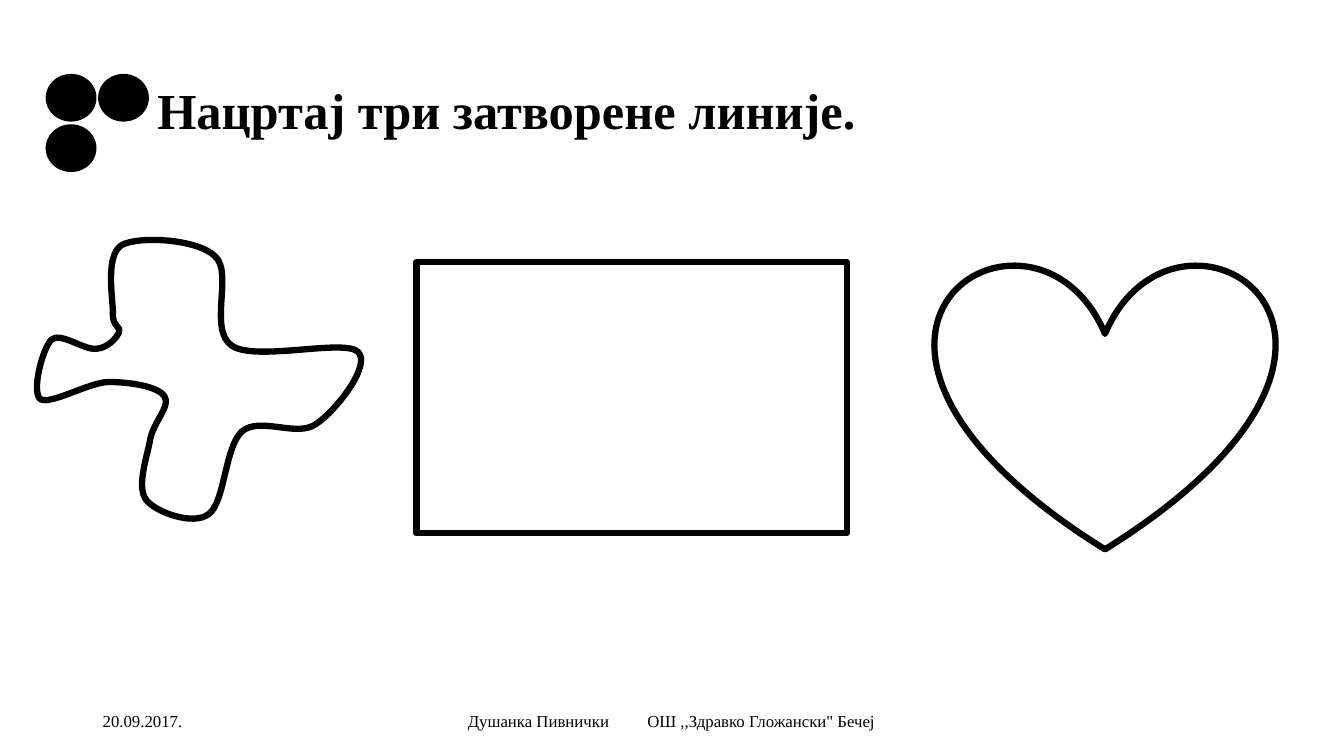
from dataclasses import dataclass

from lxml.etree import SubElement
from pptx import Presentation
from pptx.dml.color import RGBColor
from pptx.enum.shapes import MSO_SHAPE
from pptx.enum.text import MSO_ANCHOR, MSO_AUTO_SIZE, PP_ALIGN
from pptx.oxml.ns import qn
from pptx.util import Inches, Pt

COLORS = {"ink": "000000", "paper": "FFFFFF"}
FONT = "Times New Roman"


@dataclass
class Outline:
    kind: MSO_SHAPE
    left: float
    top: float
    width: float
    height: float
    fill: str = "paper"
    line_width: float = 4.5


@dataclass
class FooterText:
    text: str
    left: float
    width: float
    inset: float = 0.1
    tab: float = 0


DOT_LEFT, DOT_TOP, DOT_STEP_X, DOT_STEP_Y = 0.46, 0.74, 0.52, 0.5
DOTS = [
    Outline(MSO_SHAPE.OVAL, DOT_LEFT + column * DOT_STEP_X, DOT_TOP + row * DOT_STEP_Y,
            0.49, 0.46, "ink", 1)
    for column, row in ((0, 0), (1, 0), (0, 1))
]
CLOSED_LINES = [
    Outline(MSO_SHAPE.RECTANGLE, 4.13, 2.6, 4.27, 2.69),
    Outline(MSO_SHAPE.HEART, 9.28, 2.6, 3.36, 2.85),
]
FOOTERS = [
    FooterText("20.09.2017.", 0.92, 3),
    FooterText('Душанка Пивнички\tОШ ,,Здравко Гложански" Бечеј', 4.42, 4.5, 0.22, 1.78),
]

# Each curve: two control points and an end point, in inches.
CURVE_START = (1.12, 3.1)
CURVES = [
    ((1.12, 2.96), (1.04, 2.53), (1.21, 2.43)),
    ((1.38, 2.34), (1.95, 2.37), (2.13, 2.54)),
    ((2.32, 2.7), (2.06, 3.27), (2.3, 3.43)),
    ((2.53, 3.59), (3.41, 3.36), (3.55, 3.49)),
    ((3.69, 3.62), (3.33, 4.08), (3.13, 4.21)),
    ((2.94, 4.34), (2.58, 4.13), (2.4, 4.28)),
    ((2.23, 4.43), (2.23, 4.99), (2.07, 5.1)),
    ((1.92, 5.22), (1.54, 5.08), (1.45, 4.96)),
    ((1.35, 4.83), (1.46, 4.53), (1.49, 4.36)),
    ((1.52, 4.19), (1.7, 4.02), (1.63, 3.93)),
    ((1.56, 3.83), (1.28, 3.79), (1.07, 3.79)),
    ((0.87, 3.8), (0.5, 4.02), (0.4, 3.96)),
    ((0.31, 3.89), (0.42, 3.46), (0.51, 3.37)),
    ((0.6, 3.29), (0.84, 3.48), (0.96, 3.46)),
    ((1.07, 3.45), (1.15, 3.36), (1.18, 3.3)),
    ((1.21, 3.24), (1.11, 3.25), CURVE_START),
]


def color(name: str) -> RGBColor:
    return RGBColor.from_string(COLORS[name])


def set_all(target, values: dict) -> None:
    for name, value in values.items():
        setattr(target, name, value)


def place(shape, left: float, top: float, width: float, height: float) -> None:
    set_all(shape, {"left": Inches(left), "top": Inches(top),
                    "width": Inches(width), "height": Inches(height)})


def paint(shape, fill: str, line_width: float) -> None:
    shape.shadow.inherit = False
    shape.fill.solid()
    shape.fill.fore_color.rgb = color(fill)
    shape.line.color.rgb = color("ink")
    shape.line.width = Pt(line_width)


def write(frame, text: str, size: float, bold: bool = False):
    set_all(frame, {"word_wrap": True, "auto_size": MSO_AUTO_SIZE.NONE,
                    "vertical_anchor": MSO_ANCHOR.MIDDLE})
    para = frame.paragraphs[0]
    para.text = text
    para.alignment = PP_ALIGN.LEFT
    set_all(para.font, {"name": FONT, "size": Pt(size), "bold": bold})
    para.font.color.rgb = color("ink")
    return para


def add_outline(page, item: Outline) -> None:
    shape = page.shapes.add_shape(item.kind, Inches(item.left), Inches(item.top),
                                  Inches(item.width), Inches(item.height))
    paint(shape, item.fill, item.line_width)


def add_footer(page, item: FooterText) -> None:
    box = page.shapes.add_textbox(Inches(item.left), Inches(6.95),
                                  Inches(item.width), Inches(0.4))
    box.text_frame.margin_left = Inches(item.inset)
    para = write(box.text_frame, item.text, 12)
    if item.tab:
        properties = para._p.get_or_add_pPr()
        stops = properties.makeelement(qn("a:tabLst"))
        SubElement(stops, qn("a:tab"), pos=str(Inches(item.tab)), algn="l")
        properties.find(qn("a:defRPr")).addprevious(stops)


def add_curved_line(page) -> None:
    """Draws the closed line, turning each straight segment into a cubic curve."""
    builder = page.shapes.build_freeform(*map(Inches, CURVE_START), scale=1)
    builder.add_line_segments([tuple(map(Inches, curve[-1])) for curve in CURVES])
    shape = builder.convert_to_shape()
    segments = list(shape._element.iter(qn("a:lnTo")))
    for segment, curve in zip(segments, CURVES):
        segment.tag = qn("a:cubicBezTo")
        for index, (x, y) in enumerate(curve[:2]):
            point = segment.makeelement(qn("a:pt"), x=str(Inches(x) - shape.left),
                                        y=str(Inches(y) - shape.top))
            segment.insert(index, point)
    paint(shape, "paper", 4.5)


def main() -> None:
    deck = Presentation()
    set_all(deck, {"slide_width": Inches(13.33), "slide_height": Inches(7.5)})
    page = deck.slides.add_slide(deck.slide_layouts[5])
    title = page.shapes.title
    place(title, 1.46, 0.4, 10.95, 1.45)
    write(title.text_frame, "Нацртај три затворене линије.", 36, True).line_spacing = 0.9
    for footer in FOOTERS:
        add_footer(page, footer)
    for dot in DOTS:
        add_outline(page, dot)
    add_curved_line(page)
    for closed_line in CLOSED_LINES:
        add_outline(page, closed_line)
    deck.save("out.pptx")


if __name__ == "__main__":
    main()
